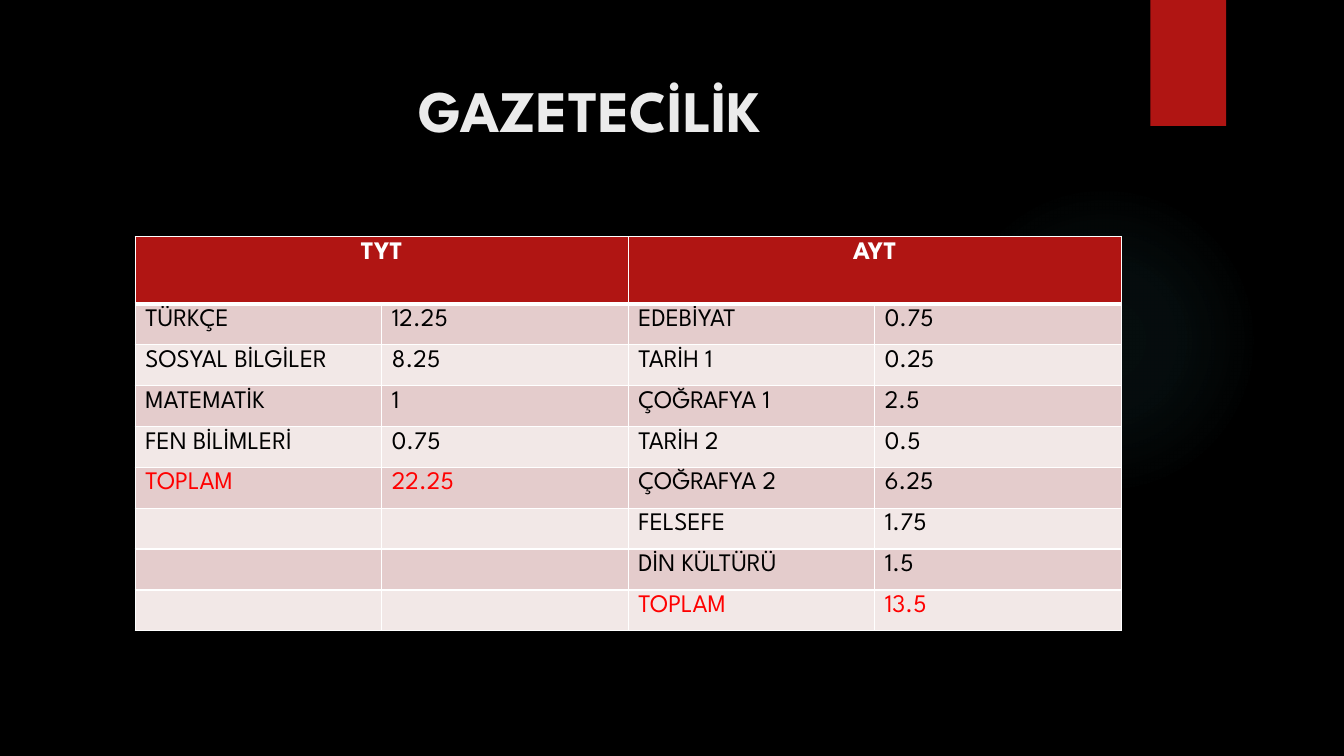
from lxml import etree
from pptx import Presentation
from pptx.dml.color import RGBColor
from pptx.enum.shapes import MSO_SHAPE
from pptx.enum.text import MSO_ANCHOR, PP_ALIGN
from pptx.oxml import parse_xml
from pptx.oxml.ns import nsdecls, qn
from pptx.util import Pt

RECTANGLE, OVAL = MSO_SHAPE.RECTANGLE, MSO_SHAPE.OVAL
TOP, CENTER, LEFT = MSO_ANCHOR.TOP, PP_ALIGN.CENTER, PP_ALIGN.LEFT

BLACK = RGBColor(0x00, 0x00, 0x00)
WHITE = RGBColor(0xFF, 0xFF, 0xFF)
PALE = RGBColor(0xEB, 0xEB, 0xEB)
CRIMSON = RGBColor(0xB0, 0x15, 0x13)
RED = RGBColor(0xFF, 0x00, 0x00)
TEAL = RGBColor(0x50, 0xB9, 0xC1)
BANDS = (RGBColor(0xE4, 0xCC, 0xCC), RGBColor(0xF2, 0xE8, 0xE7))

HEADERS = ("TYT", "AYT")
TOTAL = "TOPLAM"
TYT_SCORES = [("TÜRKÇE", "12.25"), ("SOSYAL BİLGİLER", "8.25"), ("MATEMATİK", "1"),
              ("FEN BİLİMLERİ", "0.75"), (TOTAL, "22.25")]
AYT_SCORES = [("EDEBİYAT", "0.75"), ("TARİH 1", "0.25"), ("ÇOĞRAFYA 1", "2.5"),
              ("TARİH 2", "0.5"), ("ÇOĞRAFYA 2", "6.25"), ("FELSEFE", "1.75"),
              ("DİN KÜLTÜRÜ", "1.5"), (TOTAL, "13.5")]


class SlideBuilder:
    """Draws styled elements on one slide, with lengths in points."""

    font_name = "League Spartan"

    def __init__(self, slide):
        self.slide = slide

    def background(self, color):
        fill = self.slide.background.fill
        fill.solid()
        fill.fore_color.rgb = color

    def shape(self, kind, left, top, width, height, color):
        shape = self.slide.shapes.add_shape(kind, Pt(left), Pt(top), Pt(width), Pt(height))
        shape.shadow.inherit = False
        shape.fill.solid()
        shape.fill.fore_color.rgb = color
        shape.line.fill.background()
        return shape

    def glow(self, left, top, size, color, stops):
        properties = self.shape(OVAL, left, top, size, size, color)._element.spPr
        stop_xml = "".join(
            f'<a:gs pos="{position * 1000}"><a:srgbClr val="{color}">'
            f'<a:alpha val="{alpha * 1000}"/></a:srgbClr></a:gs>'
            for position, alpha in stops)
        gradient = parse_xml(
            f'<a:gradFill {nsdecls("a")}><a:gsLst>{stop_xml}</a:gsLst><a:path path="circle">'
            '<a:fillToRect l="50000" t="50000" r="50000" b="50000"/></a:path></a:gradFill>')
        properties.replace(properties.find(qn("a:solidFill")), gradient)

    def ribbon(self, left, top, width, height, color):
        shape = self.shape(RECTANGLE, left, top, width, height, color)
        effects = shape._element.spPr.find(qn("a:effectLst"))
        shadow = etree.SubElement(effects, qn("a:outerShdw"), blurRad=str(Pt(3)),
                                  dist=str(Pt(2)), dir="5400000", rotWithShape="0")
        shadow_color = etree.SubElement(shadow, qn("a:srgbClr"), val=str(BLACK))
        etree.SubElement(shadow_color, qn("a:alpha"), val="45000")

    def text(self, frame, content, size, color, bold=False, align=LEFT):
        paragraph = frame.paragraphs[0]
        paragraph.alignment = align
        run = paragraph.add_run()
        run.text = content
        run.font.name = self.font_name
        run.font.size = Pt(size)
        run.font.bold = bold
        run.font.color.rgb = color

    def title(self, content, left, top, width, height):
        box = self.slide.shapes.add_textbox(Pt(left), Pt(top), Pt(width), Pt(height))
        frame = box.text_frame
        frame.word_wrap = True
        frame.vertical_anchor = TOP
        frame.margin_top = Pt(16.4)
        self.text(frame, content, 42, PALE, True, CENTER)

    def cell(self, cell, fill, top=1, bottom=1):
        cell.fill.solid()
        cell.fill.fore_color.rgb = fill
        properties = cell._tc.get_or_add_tcPr()
        for index, (side, width) in enumerate(zip("LRTB", (1, 1, top, bottom))):
            border = parse_xml(
                f'<a:ln{side} {nsdecls("a")} w="{Pt(width)}"><a:solidFill>'
                f'<a:srgbClr val="{WHITE}"/></a:solidFill></a:ln{side}>')
            properties.insert(index, border)

    def score_table(self, left, top, column_width, header_height, row_height):
        groups = (TYT_SCORES, AYT_SCORES)
        body_rows = max(map(len, groups))
        columns = 2 * len(groups)
        table = self.slide.shapes.add_table(
            body_rows + 1, columns, Pt(left), Pt(top), Pt(columns * column_width),
            Pt(header_height + body_rows * row_height)).table
        for column in table.columns:
            column.width = Pt(column_width)
        for row_index, row in enumerate(table.rows):
            row.height = Pt(row_height if row_index else header_height)
            for cell in row.cells:
                if row_index:
                    self.cell(cell, BANDS[(row_index - 1) % 2], top=3 if row_index == 1 else 1)
                else:
                    self.cell(cell, CRIMSON, bottom=3)
        for group_index, (header, scores) in enumerate(zip(HEADERS, groups)):
            first = 2 * group_index
            table.cell(0, first).merge(table.cell(0, first + 1))
            self.text(table.cell(0, first).text_frame, header, 18, WHITE, True, CENTER)
            for row_index, pair in enumerate(scores, 1):
                color = RED if pair[0] == TOTAL else BLACK
                for offset, content in enumerate(pair):
                    self.text(table.cell(row_index, first + offset).text_frame, content, 18, color)


def main():
    presentation = Presentation()
    presentation.slide_width, presentation.slide_height = Pt(960), Pt(540)
    builder = SlideBuilder(presentation.slides.add_slide(presentation.slide_layouts[6]))
    builder.background(BLACK)
    builder.glow(677.5, 131.8, 221.8, TEAL, ((0, 7), (36, 6), (69, 0)))
    builder.ribbon(821.8, 0, 54, 90, CRIMSON)
    builder.title("GAZETECİLİK", 51, 36, 741, 110)
    builder.score_table(96.6, 169, 176.1, 48, 29.2)
    presentation.save("out.pptx")


if __name__ == "__main__":
    main()
